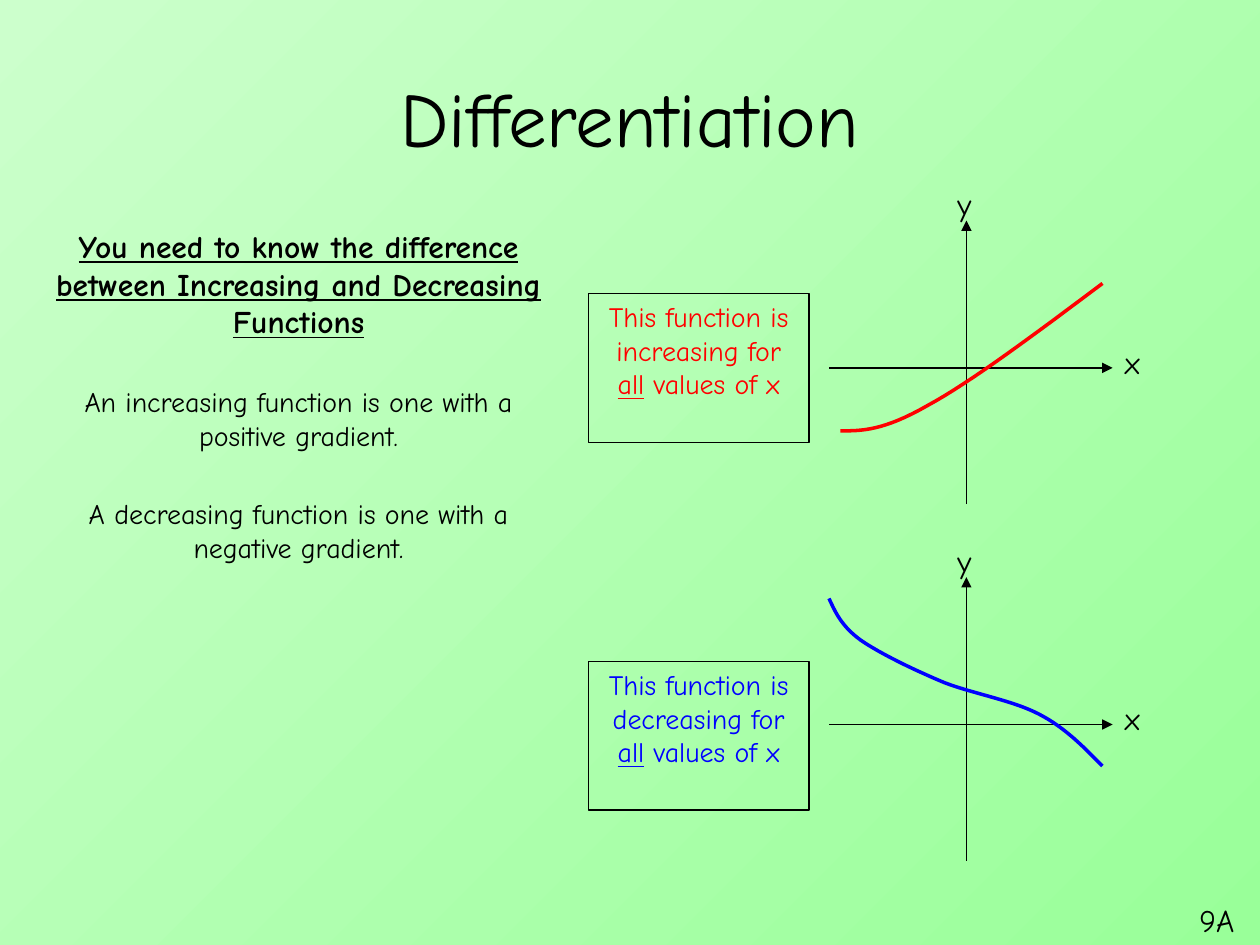
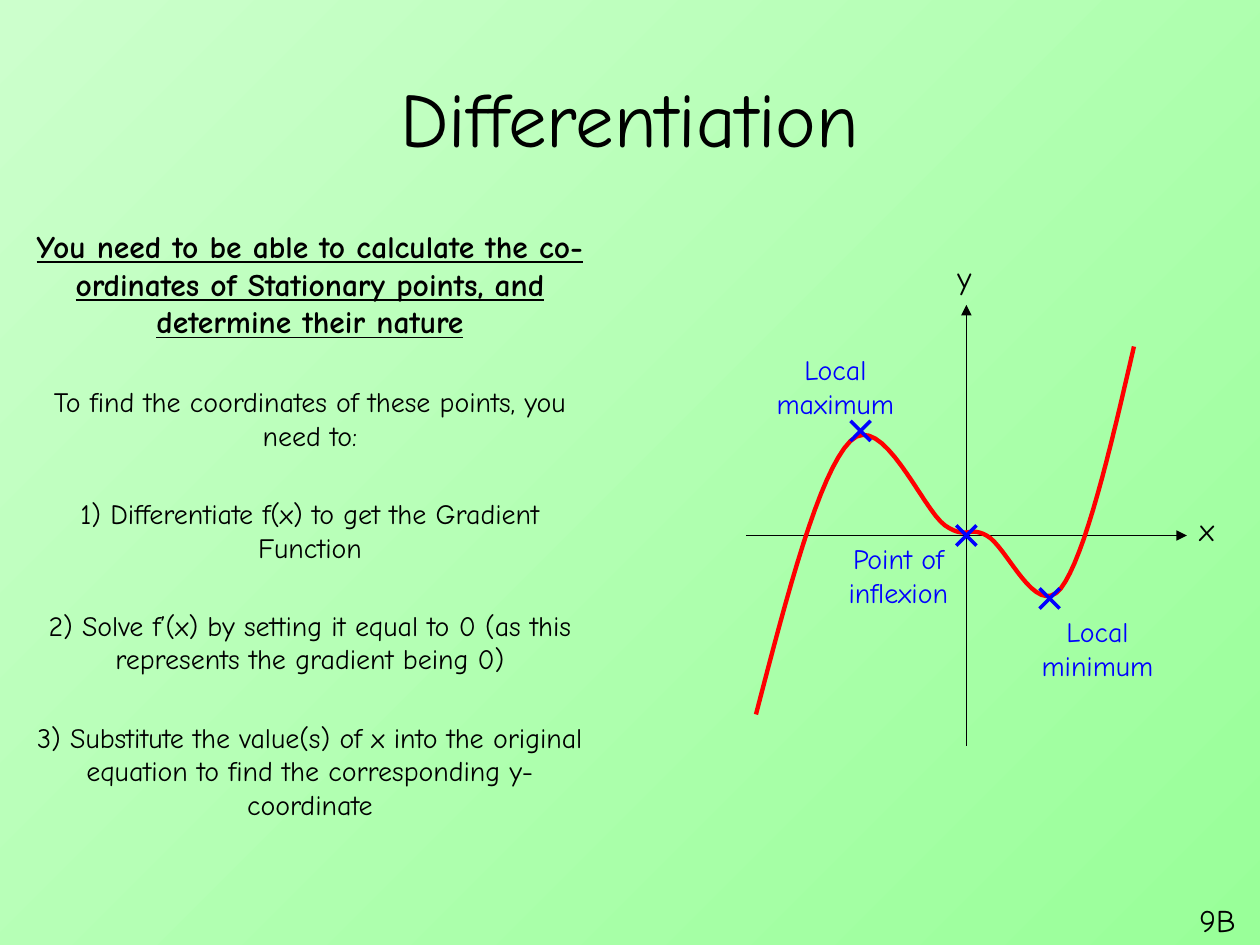
from lxml.etree import SubElement
from pptx import Presentation
from pptx.dml.color import RGBColor
from pptx.enum.shapes import MSO_CONNECTOR as Connector, MSO_SHAPE as Shape
from pptx.enum.text import MSO_ANCHOR as Anchor, PP_ALIGN as Align
from pptx.oxml.ns import qn
from pptx.util import Inches, Pt

# Shared style
FONT = "Comic Neue"
BLACK = RGBColor(0, 0, 0)
RED = RGBColor(255, 0, 0)
BLUE = RGBColor(0, 0, 255)
LIGHT_GREEN = RGBColor(0xCC, 0xFF, 0xCC)
GREEN = RGBColor(0x99, 0xFF, 0x99)
TITLE = "Differentiation"
CROSS_REACH = 0.08
CURVE_STEPS = 16

# Content; curves are a start point followed by groups of three Bezier points
PAGES = [
    {
        "section": "9A",
        "text_area": (0.33, 1.75, 4.08, 4.95),
        "heading": "You need to know the difference between Increasing and Decreasing Functions",
        "points": [
            "An increasing function is one with a positive gradient.",
            "A decreasing function is one with a negative gradient.",
        ],
        "graphs": [
            {"origin": (7.67, 2.92), "left": 6.58, "top": 1.75, "length": 2.25,
             "y_gap": 0.33, "color": RED, "weight": 2,
             "curve": [(6.67, 3.42),
                       (6.84, 3.42), (7.01, 3.42), (7.36, 3.22),
                       (7.71, 3.03), (8.23, 2.64), (8.75, 2.25)]},
            {"origin": (7.67, 5.75), "left": 6.58, "top": 4.58, "length": 2.25,
             "y_gap": 0.33, "color": BLUE, "weight": 2,
             "curve": [(6.58, 4.75),
                       (6.63, 4.86), (6.68, 4.97), (6.83, 5.08),
                       (6.99, 5.19), (7.26, 5.32), (7.5, 5.42),
                       (7.74, 5.51), (8.04, 5.56), (8.25, 5.67),
                       (8.46, 5.78), (8.6, 5.93), (8.75, 6.08)]},
        ],
        "notices": [("increasing", 2.33, RED), ("decreasing", 5.25, BLUE)],
        "stationary_points": [],
    },
    {
        "section": "9B",
        "text_area": (0.17, 1.75, 4.58, 4.95),
        "heading": "You need to be able to calculate the co-ordinates of Stationary points, "
                   "and determine their nature",
        "points": [
            "To find the coordinates of these points, you need to:",
            "1) Differentiate f(x) to get the Gradient Function",
            "2) Solve f’(x) by setting it equal to 0 (as this represents the gradient being 0)",
            "3) Substitute the value(s) of x into the original equation to find the "
            "corresponding y-coordinate",
        ],
        "graphs": [
            {"origin": (7.67, 4.25), "left": 5.92, "top": 2.42, "length": 3.5,
             "y_gap": 0.42, "color": RED, "weight": 2.5,
             "curve": [(6, 5.67),
                       (6.25, 4.71), (6.5, 3.75), (6.75, 3.5),
                       (7, 3.25), (7.32, 4.04), (7.5, 4.17),
                       (7.68, 4.29), (7.68, 4.17), (7.83, 4.25),
                       (7.99, 4.33), (8.22, 4.92), (8.42, 4.67),
                       (8.61, 4.42), (8.81, 3.58), (9, 2.75)]},
        ],
        "notices": [],
        # label, label position, cross centre
        "stationary_points": [
            ("Local maximum", (5.92, 2.75), (6.83, 3.42)),
            ("Point of inflexion", (6.42, 4.25), (7.67, 4.25)),
            ("Local minimum", (8, 4.83), (8.33, 4.75)),
        ],
    },
]


def style(para, size, color=BLACK, align=Align.LEFT):
    para.alignment = align
    para.font.name = FONT
    para.font.size = Pt(size)
    para.font.color.rgb = color


def add_text(page, area, text, size=18, color=BLACK, align=Align.LEFT, anchor=Anchor.TOP):
    frame = page.shapes.add_textbox(*map(Inches, area)).text_frame
    frame.word_wrap = True
    frame.vertical_anchor = anchor
    para = frame.paragraphs[0]
    para.text = text
    style(para, size, color, align)
    return frame


def add_line(page, start, end, color=BLACK, weight=0.75, arrow=False):
    line = page.shapes.add_connector(Connector.STRAIGHT, *map(Inches, (*start, *end)))
    line.line.color.rgb = color
    line.line.width = Pt(weight)
    if arrow:
        SubElement(line.line._get_or_add_ln(), qn("a:tailEnd"), type="triangle")
    SubElement(line._element.spPr, qn("a:effectLst"))


def bezier_points(knots):
    """Sample a chain of cubic Bezier segments."""
    for first in range(0, len(knots) - 1, 3):
        a, b, c, d = knots[first:first + 4]
        for step in range(1, CURVE_STEPS + 1):
            t = step / CURVE_STEPS
            s = 1 - t
            yield tuple(Inches(s**3 * a[i] + 3 * s * s * t * b[i] + 3 * s * t * t * c[i] + t**3 * d[i])
                        for i in (0, 1))


def add_curve(page, knots, color, weight):
    builder = page.shapes.build_freeform(*map(Inches, knots[0]))
    builder.add_line_segments(bezier_points(knots), close=False)
    curve = builder.convert_to_shape()
    curve.shadow.inherit = False
    curve.fill.background()
    curve.line.color.rgb = color
    curve.line.width = Pt(weight)


def add_graph(page, graph):
    x, y = graph["origin"]
    left, top, length = graph["left"], graph["top"], graph["length"]
    right = left + length
    add_line(page, (x, top + length), (x, top), arrow=True)
    add_line(page, (left, y), (right, y), arrow=True)
    add_text(page, (right, y - 0.25, 0.35, 0.4), "x")
    add_text(page, (x - 0.17, top - graph["y_gap"], 0.35, 0.4), "y")
    add_curve(page, graph["curve"], graph["color"], graph["weight"])


def add_notice(page, trend, top, color):
    box = page.shapes.add_shape(Shape.RECTANGLE, *map(Inches, (4.67, top, 1.75, 1.18)))
    box.shadow.inherit = False
    box.fill.background()
    box.line.color.rgb = BLACK
    box.line.width = Pt(0.75)
    frame = box.text_frame
    frame.word_wrap = True
    frame.vertical_anchor = Anchor.TOP
    para = frame.paragraphs[0]
    style(para, 16, color, Align.CENTER)
    for text in (f"This function is {trend} for ", "all", " values of x"):
        span = para.add_run()
        span.text = text
        span.font.underline = text == "all"


def add_stationary_point(page, label, place, centre):
    x, y = centre
    for slope in (1, -1):
        rise = slope * CROSS_REACH
        add_line(page, (x - CROSS_REACH, y - rise), (x + CROSS_REACH, y + rise), BLUE, 2)
    add_text(page, (*place, 1.42, 0.64), label, 16, BLUE, Align.CENTER)


def add_page(deck, content):
    page = deck.slides.add_slide(deck.slide_layouts[6])
    add_text(page, (0.5, 0.3, 9, 1.25), TITLE, 44, align=Align.CENTER, anchor=Anchor.MIDDLE)

    # Explanation on the left
    frame = add_text(page, content["text_area"], content["heading"], align=Align.CENTER)
    frame.paragraphs[0].font.bold = True
    frame.paragraphs[0].font.underline = True
    for point in content["points"]:
        para = frame.add_paragraph()
        para.text = point
        para.space_before = Pt(25.5)
        style(para, 16, align=Align.CENTER)

    # Graphs and their labels on the right
    for graph in content["graphs"]:
        add_graph(page, graph)
    for notice in content["notices"]:
        add_notice(page, *notice)
    for stationary_point in content["stationary_points"]:
        add_stationary_point(page, *stationary_point)

    add_text(page, (9.42, 7.1, 0.58, 0.4), content["section"])


def main():
    deck = Presentation()
    deck.slide_width, deck.slide_height = Inches(10), Inches(7.5)

    # Diagonal green background for every page
    fill = deck.slide_master.background.fill
    fill.gradient()
    fill.gradient_angle = 315
    for stop, color in zip(fill.gradient_stops, (LIGHT_GREEN, GREEN)):
        stop.color.rgb = color

    for content in PAGES:
        add_page(deck, content)
    deck.save("out.pptx")


if __name__ == "__main__":
    main()
